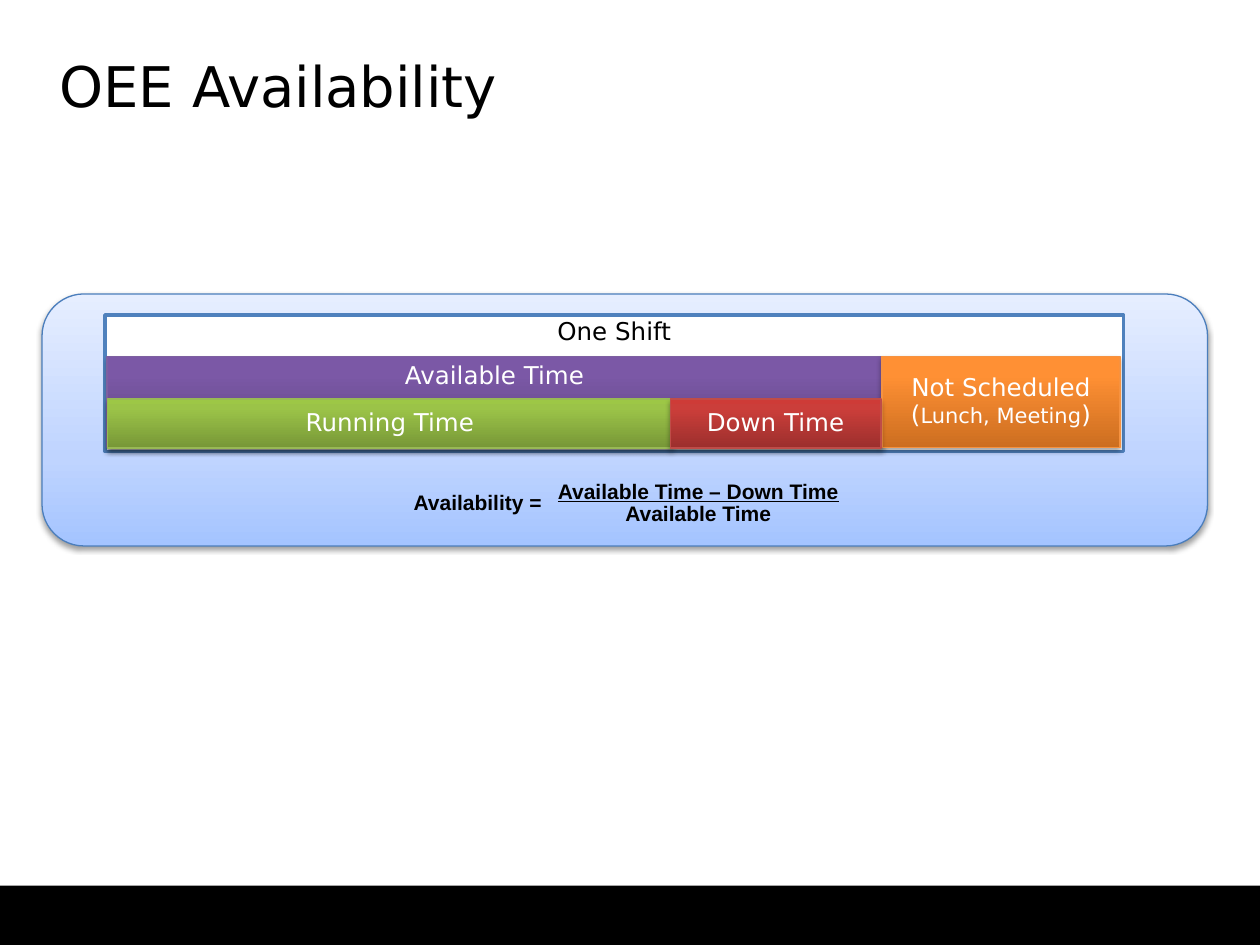
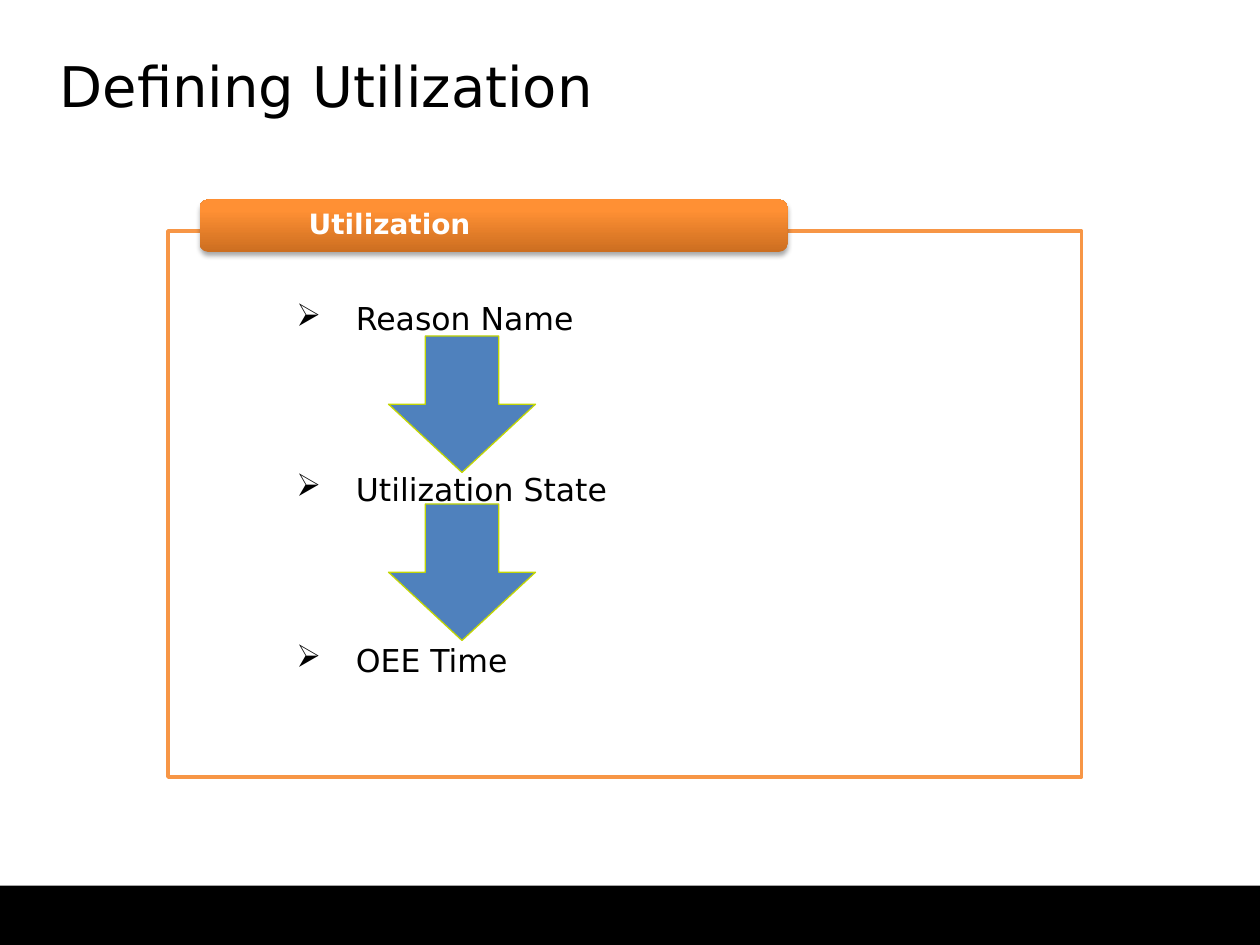
import pptx
import pptx.dml.color
import pptx.enum.shapes
import pptx.enum.text
import pptx.oxml
import pptx.oxml.ns
import pptx.util
from lxml import etree

Pt = pptx.util.Pt
qn = pptx.oxml.ns.qn
Shape = pptx.enum.shapes.MSO_SHAPE
Align = pptx.enum.text.PP_ALIGN
Anchor = pptx.enum.text.MSO_ANCHOR

COLOURS = {
    "black": "000000", "white": "FFFFFF", "blue": "4F81BD", "orange": "F79646",
    "panel line": "4B7EBC", "purple line": "7D60A0", "orange line": "F69240",
    "green line": "98B955", "red line": "BF4C48", "lime line": "C3D603",
}
# Stops run from the bottom edge to the top edge: position in percent, colour.
GRADIENTS = {
    "panel": [(0, "A4C4FF"), (35, "BFD4FF"), (100, "E6EEFF")],
    "purple": [(0, "5F4480"), (80, "7B58A6"), (100, "7C57A8")],
    "orange": [(0, "CC6E20"), (80, "FF9034"), (100, "FF9136")],
    "green": [(0, "779737"), (80, "9BC348"), (100, "9DC746")],
    "red": [(0, "9C2F2D"), (80, "CB3E3A"), (100, "CE3B37")],
}
SANS = "DejaVu Sans"
INSETS = (7.2, 3.6, 7.2, 3.6)


def colour(name):
    return pptx.dml.color.RGBColor.from_string(COLOURS[name])


def write(box, paragraphs, size=14, font=SANS, ink="black", bold=False, underlined=(),
          align=Align.CENTER, anchor=Anchor.TOP, insets=INSETS, spacing=0.9,
          gap=0, bullet=None, indent=(0, 0)):
    """Fill box; a paragraph is a string or a list of (text, size) spans."""
    frame = box.text_frame
    frame.word_wrap = True
    frame.auto_size = pptx.enum.text.MSO_AUTO_SIZE.NONE
    frame.vertical_anchor = anchor
    frame.margin_left, frame.margin_top, frame.margin_right, frame.margin_bottom = map(Pt, insets)
    for index, content in enumerate(paragraphs):
        para = frame.add_paragraph() if index else frame.paragraphs[0]
        para.alignment = align
        para.line_spacing = spacing
        if index and gap:
            para.space_before = Pt(gap)
        if bullet:
            add_bullet(para, bullet, *indent)
        for text, span_size in [(content, size)] if isinstance(content, str) else content:
            span = para.add_run()
            span.text = text
            span.font.name = font
            span.font.size = Pt(span_size)
            span.font.bold = bold
            span.font.underline = index in underlined
            span.font.color.rgb = colour(ink)


def add_bullet(para, symbol, left, hanging):
    properties = para._p.get_or_add_pPr()
    properties.set("marL", str(Pt(left)))
    properties.set("indent", str(Pt(-hanging)))
    etree.SubElement(properties, qn("a:buChar"), char=symbol)


def fill_gradient(shape, stops):
    shape.fill.gradient()
    shape.fill.gradient_angle = 90
    stop_list = shape.element.spPr.find(".//" + qn("a:gsLst"))
    for stop in list(stop_list):
        stop_list.remove(stop)
    for position, value in stops:
        stop = etree.SubElement(stop_list, qn("a:gs"), pos=str(position * 1000))
        etree.SubElement(stop, qn("a:srgbClr"), val=value)


def add_shadow(shape, opacity, distance):
    effects = shape.element.spPr.find(qn("a:effectLst"))
    shadow = etree.SubElement(effects, qn("a:outerShdw"), blurRad=str(Pt(3.1)),
                              dist=str(Pt(distance)), dir="5400000", rotWithShape="0")
    tint = etree.SubElement(shadow, qn("a:srgbClr"), val=COLOURS["black"])
    etree.SubElement(tint, qn("a:alpha"), val=str(opacity * 1000))


def add_block(page, kind, place, fill=None, gradient=None, line=None, width=0.75,
              shadow=(35, 1.8)):
    """Add a preset shape; only gradient blocks cast a shadow."""
    block = page.shapes.add_shape(kind, *map(Pt, place))
    block.shadow.inherit = False
    if gradient:
        fill_gradient(block, GRADIENTS[gradient])
        add_shadow(block, *shadow)
    else:
        block.fill.solid()
        block.fill.fore_color.rgb = colour(fill)
    if line:
        block.line.color.rgb = colour(line)
        block.line.width = Pt(width)
    else:
        block.line.fill.background()
    return block


def add_text(page, place, paragraphs, **form):
    write(page.shapes.add_textbox(*map(Pt, place)), paragraphs, **form)


def add_page(deck, title):
    page = deck.slides.add_slide(deck.slide_layouts[5])
    heading = page.shapes.title
    heading.left, heading.top, heading.width, heading.height = map(Pt, (34, 33, 652, 71))
    write(heading, [title], size=32, align=Align.LEFT, insets=(0, 0, 0, 0), spacing=Pt(35))
    return page


def add_footer_band(page):
    """Draw the band, then hand it to the layout that all pages share."""
    band = add_block(page, Shape.RECTANGLE, (0, 506, 720, 34), fill="black")
    page.slide_layout.placeholders[0].element.addprevious(band.element)


def add_time_bar(page, place, hue, paragraphs, anchor=Anchor.MIDDLE):
    bar = add_block(page, Shape.RECTANGLE, place, gradient=hue, line=hue + " line")
    write(bar, paragraphs, ink="white", anchor=anchor)


def build_availability(page):
    add_block(page, Shape.ROUNDED_RECTANGLE, (24, 168, 666, 144), gradient="panel",
              line="panel line", shadow=(38, 1.6))
    shift = add_block(page, Shape.RECTANGLE, (60, 180, 582, 78), fill="white",
                      line="blue", width=2)
    write(shift, ["One Shift"], insets=(7.2, 2.2, 7.2, 3.6))
    add_time_bar(page, (61.2, 203.8, 442.8, 52), "purple", ["Available Time"], Anchor.TOP)
    add_time_bar(page, (504, 203.8, 136, 52), "orange",
                 [[("Not Scheduled (", 14), ("Lunch, Meeting", 12), (")", 14)]])
    add_time_bar(page, (61.6, 228, 322.4, 28), "green", ["Running Time"])
    add_time_bar(page, (383, 228, 120.4, 28), "red", ["Down Time"])

    formula = dict(size=12, font="Arial", bold=True)
    add_text(page, (300, 271.4, 198, 34), ["Available Time – Down Time", "Available Time"],
             underlined=(0,), **formula)
    add_text(page, (222, 278, 102, 20), ["Availability ="], **formula)


def build_utilization(page):
    frame = (96, 132, 522, 312)
    add_block(page, Shape.RECTANGLE, frame, fill="white", line="orange", width=2)
    add_text(page, frame, ["Reason Name", "Utilization State", "OEE Time"], size=18,
             align=Align.LEFT, insets=(37.4, 41.4, 37.4, 7.2), gap=78.2,
             bullet="➢", indent=(70, 34))
    add_block(page, Shape.ROUNDED_RECTANGLE, (114, 114, 336, 30), gradient="orange")
    add_text(page, (163.4, 115.2, 333, 27.4), ["Utilization"], size=16, ink="white", bold=True,
             align=Align.LEFT, anchor=Anchor.MIDDLE, insets=(13, 0, 13, 0))
    for step in range(2):
        add_block(page, Shape.DOWN_ARROW, (222, 192 + 96 * step, 84, 78), fill="blue",
                  line="lime line")


def main():
    deck = pptx.Presentation()
    deck.slide_width, deck.slide_height = Pt(720), Pt(540)
    availability = add_page(deck, "OEE Availability")
    add_footer_band(availability)
    build_availability(availability)
    build_utilization(add_page(deck, "Defining Utilization"))
    deck.save("out.pptx")


if __name__ == "__main__":
    main()
